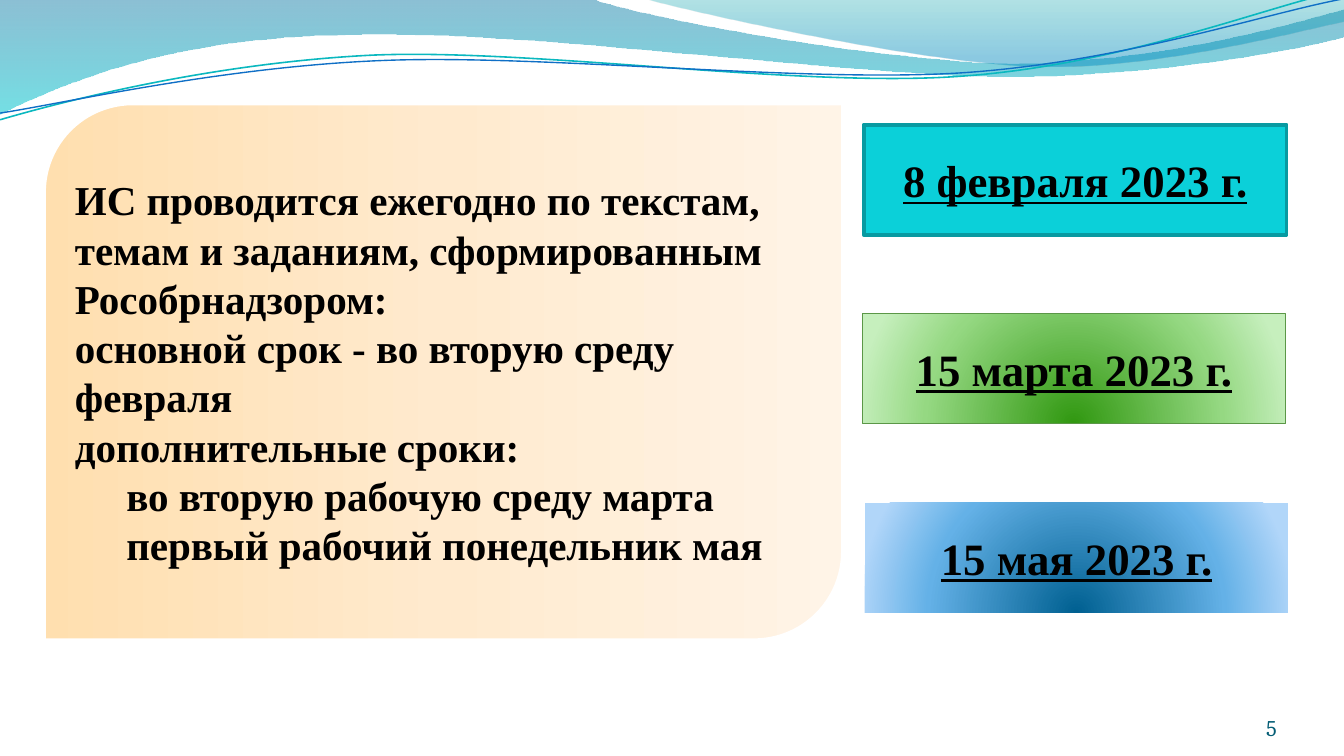
from lxml import etree
from pptx import Presentation
from pptx.dml.color import RGBColor
from pptx.enum.shapes import MSO_SHAPE as SHAPE
from pptx.enum.text import MSO_ANCHOR as ANCHOR, PP_ALIGN as ALIGN
from pptx.oxml.ns import qn
from pptx.util import Pt

SERIF = "Times New Roman"
LINE_TILT = -2.7

# Waves in points: a start, then corners (x, y) or cubic curves (x1, y1, x2, y2, x, y)
BROAD_WAVE = [
    (0, 0), (316.8, -0.7),
    (342.7, 9.4, 478.1, 33.8, 545.8, 33.8),
    (614.2, 33.8, 689.8, 13.7, 720, 5),
    (720.7, 19.4),
    (707.8, 23.8, 626.4, 41, 537.1, 41),
    (447.8, 40.3, 275, 15.1, 185, 18.7),
    (92.9, 19.4, 33.1, 44.6, -0.7, 61.2),
]
RIGHT_WAVE = [
    (344.9, -0.7),
    (366.5, 5.8, 491, 33.1, 553.7, 35.3),
    (616.3, 37.4, 691.9, 17.3, 720, 11.5),
    (720, 0),
]
# The two thin lines are laid out level and tilted afterwards
TEAL_LINE = [
    (-1.1, 47.2),
    (33.9, 38.7, 114, 22.2, 199.7, 22),
    (285.5, 22.4, 425.4, 50, 511.9, 48.2),
    (599.3, 46.6, 677.1, 19.2, 719.9, 11.9),
]
BLUE_LINE = [
    (-0.9, 43.6),
    (33.1, 40.1, 118.2, 24.6, 204, 25.1),
    (290.5, 25.5, 429.1, 47.9, 515.7, 46.3),
    (601.5, 44.5, 678.4, 22.2, 721.1, 16.3),
]

SCHEDULE = [
    ("ИС проводится ежегодно по текстам, темам и заданиям, "
     "сформированным Рособрнадзором:", 0),
    ("основной срок - во вторую среду февраля", 0),
    ("дополнительные сроки:", 0),
    ("во вторую рабочую среду марта\vпервый рабочий понедельник мая", 27.5),
]


def color(value):
    return RGBColor.from_string(value)


def set_line(shape, value=None, width=1):
    if value is None:
        shape.line.fill.background()
    else:
        shape.line.color.rgb = color(value)
        shape.line.width = Pt(width)


def gradient(shape, stops, angle=None):
    """Stops are (position, colour, opacity); without an angle it glows from below."""
    shape.fill.gradient()
    grad = shape.fill._xPr.find(qn("a:gradFill"))
    for child in list(grad):
        grad.remove(child)
    stop_list = etree.SubElement(grad, qn("a:gsLst"))
    for position, value, opacity in stops:
        stop = etree.SubElement(stop_list, qn("a:gs"), pos=str(position * 1000))
        tint = etree.SubElement(stop, qn("a:srgbClr"), val=value)
        if opacity < 100:
            etree.SubElement(tint, qn("a:alpha"), val=str(opacity * 1000))
    if angle is not None:
        etree.SubElement(grad, qn("a:lin"), ang=str(angle * 60000), scaled="0")
    else:
        glow = etree.SubElement(grad, qn("a:path"), path="circle")
        etree.SubElement(glow, qn("a:fillToRect"),
                         l="50000", t="130000", r="50000", b="-30000")


def add_wave(slide, outline, closed):
    """Build the outline from its points, then merge each curve's three into a cubic."""
    points = [(Pt(x), Pt(y)) for segment in outline
              for x, y in zip(segment[::2], segment[1::2])]
    builder = slide.shapes.build_freeform(*points[0])
    builder.add_line_segments(points[1:], close=closed)
    wave = builder.convert_to_shape()
    wave.shadow.inherit = False

    steps = iter(list(wave._element.iter(qn("a:lnTo"))))
    for segment in outline[1:]:
        step = next(steps)
        if len(segment) == 6:
            step.tag = qn("a:cubicBezTo")
            for _ in range(2):
                extra = next(steps)
                step.append(extra[0])
                extra.getparent().remove(extra)
    return wave


def add_wave_band(slide, outline, stops):
    band = add_wave(slide, outline, True)
    gradient(band, stops, 90)
    set_line(band)


def add_wave_line(slide, outline, value, width):
    strand = add_wave(slide, outline, False)
    strand.rotation = LINE_TILT
    strand.fill.background()
    set_line(strand, value, width)


def add_box(slide, kind, left, top, width, height):
    box = slide.shapes.add_shape(kind, Pt(left), Pt(top), Pt(width), Pt(height))
    box.shadow.inherit = False
    box.text_frame.word_wrap = True
    box.text_frame.vertical_anchor = ANCHOR.MIDDLE
    return box


def set_insets(frame, inset):
    frame.margin_left = frame.margin_right = Pt(inset)
    frame.margin_top = frame.margin_bottom = Pt(inset)


def style(paragraph, size, align, font=SERIF, value="000000", bold=True, underline=False):
    paragraph.alignment = align
    for run in paragraph.runs:
        run.font.name = font
        run.font.size = Pt(size)
        run.font.bold = bold
        run.font.underline = underline
        run.font.color.rgb = color(value)


def add_schedule(slide):
    panel = add_box(slide, SHAPE.ROUND_2_DIAG_RECTANGLE, 23.1, 54.9, 429, 288.6)
    gradient(panel, [(0, "FFDFAF", 100), (50, "FFEACE", 100), (100, "FFF4E7", 100)], 0)
    set_line(panel, "FFFFFF", 3)
    frame = panel.text_frame
    set_insets(frame, 3)
    for index, (text, indent) in enumerate(SCHEDULE):
        paragraph = frame.add_paragraph() if index else frame.paragraphs[0]
        paragraph.text = text
        if indent:
            paragraph._p.get_or_add_pPr().set("marL", str(Pt(indent)))
        style(paragraph, 22, ALIGN.LEFT)


def add_date(slide, text, left, top):
    date = add_box(slide, SHAPE.RECTANGLE, left, top, 226.6, 59)
    date.text_frame.text = text
    style(date.text_frame.paragraphs[0], 24, ALIGN.CENTER, underline=True)
    return date


def add_page_number(slide, number):
    page = slide.shapes.add_textbox(Pt(624), Pt(375.2), Pt(60), Pt(21.6))
    frame = page.text_frame
    frame.word_wrap = True
    frame.vertical_anchor = ANCHOR.BOTTOM
    set_insets(frame, 0)
    frame.text = number
    style(frame.paragraphs[0], 12, ALIGN.RIGHT, "Cambria", "045D75", bold=False)


def main():
    deck = Presentation()
    deck.slide_width, deck.slide_height = Pt(720), Pt(405)
    slide = deck.slides.add_slide(deck.slide_layouts[6])

    # Waves along the top
    add_wave_band(slide, BROAD_WAVE, [(0, "0074A1", 45), (100, "00C6CF", 55)])
    add_wave_band(slide, RIGHT_WAVE, [(0, "00A1A9", 30), (80, "008BBF", 45)])
    add_wave_line(slide, TEAL_LINE, "0AB8BF", 0.85)
    add_wave_line(slide, BLUE_LINE, "0F6FC6", 0.75)

    add_page_number(slide, "5")
    add_schedule(slide)

    # Dates, evenly spaced down the right side
    first_top, pitch = 66.8, 101.2
    february = add_date(slide, "8 февраля 2023 г.", 462.7, first_top)
    february.fill.solid()
    february.fill.fore_color.rgb = color("0BD0D9")
    set_line(february, "089AA1", 2)

    march = add_date(slide, "15 марта 2023 г.", 462, first_top + pitch)
    gradient(march, [(0, "319811", 100), (68, "95D882", 100), (100, "C6EFBD", 100)])
    set_line(march, "5B9747", 0.75)

    may = add_date(slide, "15 мая 2023 г.", 463.4, first_top + 2 * pitch)
    gradient(may, [(0, "006091", 100), (68, "64B1E7", 100), (100, "B1D6F9", 100)])
    set_line(may)

    deck.save("out.pptx")


if __name__ == "__main__":
    main()
